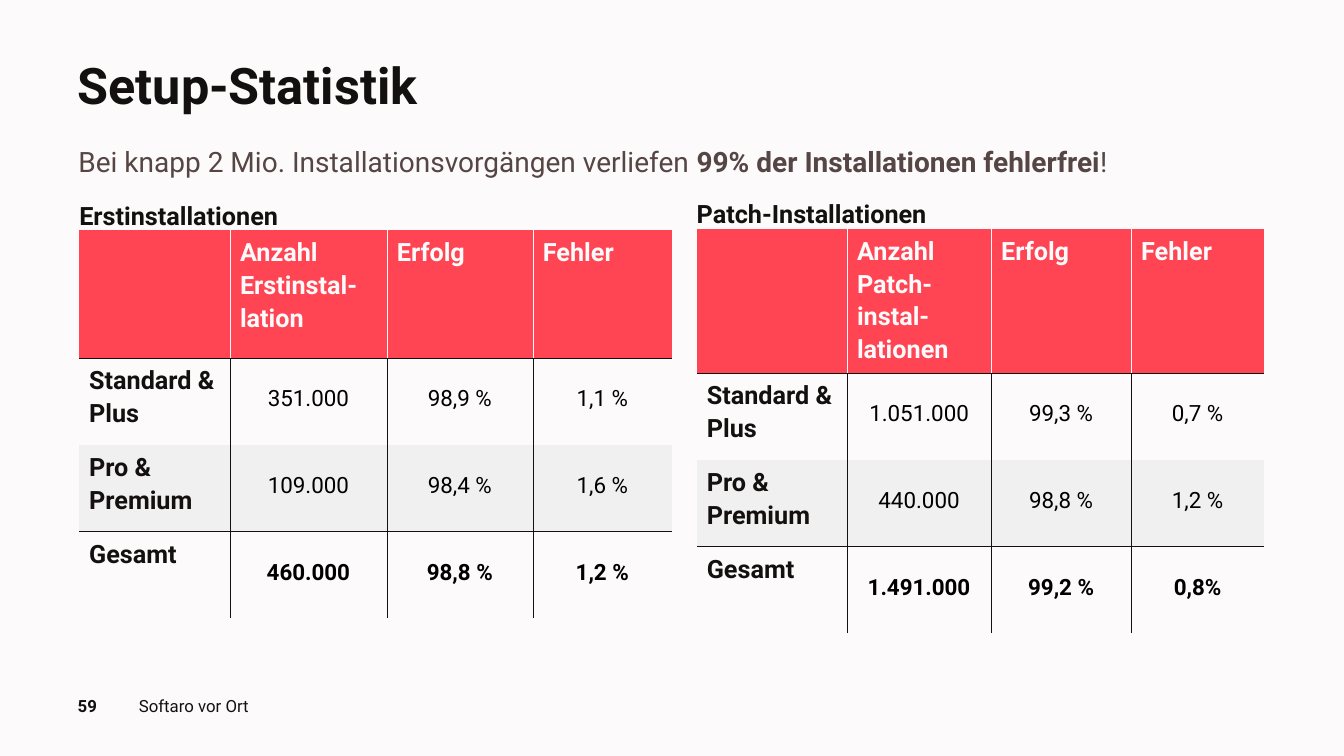
import pptx
import pptx.dml.color
import pptx.enum.text
import pptx.oxml
import pptx.oxml.ns
import pptx.util

Pt = pptx.util.Pt
ALIGN = pptx.enum.text.PP_ALIGN
ANCHOR = pptx.enum.text.MSO_ANCHOR

INK, BLACK, BROWN = "141010", "000000", "564545"
PAPER, RED, GREY = "FCFAFA", "FF4554", "F0F0F0"
HEADER_HEIGHT, BODY_HEIGHT = 91.5, 62
TOTAL_ROW = 3

INITIAL_ROWS = [
    ["", "Anzahl\nErstinstal-lation", "Erfolg", "Fehler"],
    ["Standard & Plus", "351.000", "98,9 %", "1,1 %"],
    ["Pro & Premium", "109.000", "98,4 %", "1,6 %"],
    ["Gesamt", "460.000", "98,8 %", "1,2 %"],
]
PATCH_ROWS = [
    ["", "Anzahl\vPatch-instal-lationen", "Erfolg", "Fehler"],
    ["Standard & Plus", "1.051.000", "99,3 %", "0,7 %"],
    ["Pro & Premium", "440.000", "98,8 %", "1,2 %"],
    ["Gesamt", "1.491.000", "99,2 %", "0,8%"],
]


def color(value):
    return pptx.dml.color.RGBColor.from_string(value)


def set_font(span, size, ink, bold=False):
    for name, value in {"name": "Roboto", "size": Pt(size), "bold": bold}.items():
        setattr(span.font, name, value)
    span.font.color.rgb = color(ink)


def add_text(page, place, spans, size, ink, spacing=1.0, insets=(0, 0, 0, 0)):
    """Add a one-paragraph box; spans are (text, bold) pairs."""
    box = page.shapes.add_textbox(*map(Pt, place))
    frame = box.text_frame
    frame.word_wrap = True
    sides = ("margin_left", "margin_top", "margin_right", "margin_bottom")
    for side, inset in zip(sides, insets):
        setattr(frame, side, Pt(inset))
    para = frame.paragraphs[0]
    para.line_spacing = spacing
    for text, bold in spans:
        span = para.add_run()
        span.text = text
        set_font(span, size, ink, bold)


def set_borders(cell, borders):
    """Draw the named edges in their colours and leave the others empty."""
    properties = cell._tc.get_or_add_tcPr()
    namespace = pptx.oxml.ns.nsdecls("a")
    for position, side in enumerate("LRTB"):
        paint = "<a:noFill/>"
        if side in borders:
            paint = f'<a:solidFill><a:srgbClr val="{borders[side]}"/></a:solidFill>'
        line = pptx.oxml.parse_xml(
            f'<a:ln{side} {namespace} w="{Pt(0.5)}">{paint}</a:ln{side}>')
        properties.insert(position, line)


def cell_borders(row, column, last_row, last_column):
    """White rules in the header, dark rules in the body and above the total."""
    upright = PAPER if row == 0 else INK
    borders = {}
    if column > 0:
        borders["L"] = upright
    if column < last_column:
        borders["R"] = upright
    if row in (1, TOTAL_ROW):
        borders["T"] = INK
    if row + 1 in (1, TOTAL_ROW) and row < last_row:
        borders["B"] = INK
    return borders


def format_cell(cell, row, column):
    fill = {0: RED, 2: GREY}.get(row)
    if fill:
        cell.fill.solid()
        cell.fill.fore_color.rgb = color(fill)
    else:
        cell.fill.background()
    is_number = row > 0 and column > 0
    if is_number:
        cell.vertical_anchor = ANCHOR.MIDDLE
    for para in cell.text_frame.paragraphs:
        para.line_spacing = Pt(15) if is_number else 1.11
        if is_number:
            para.alignment = ALIGN.CENTER
        for span in para.runs:
            if is_number:
                set_font(span, 16, BLACK, row == TOTAL_ROW)
            else:
                set_font(span, 18, PAPER if row == 0 else INK, True)


def add_statistics(page, left, top, widths, rows):
    heights = [HEADER_HEIGHT] + [BODY_HEIGHT] * (len(rows) - 1)
    place = map(Pt, (left, top, sum(widths), sum(heights)))
    table = page.shapes.add_table(len(rows), len(widths), *place).table
    table.horz_banding = False
    for table_column, width in zip(table.columns, widths):
        table_column.width = Pt(width)
    for table_row, height in zip(table.rows, heights):
        table_row.height = Pt(height)
    for row, texts in enumerate(rows):
        for column, text in enumerate(texts):
            cell = table.cell(row, column)
            cell.text_frame.text = text
            format_cell(cell, row, column)
            set_borders(cell, cell_borders(row, column, len(rows) - 1, len(texts) - 1))


def main():
    deck = pptx.Presentation()
    deck.slide_width, deck.slide_height = Pt(960), Pt(540)
    page = deck.slides.add_slide(deck.slide_layouts[6])
    page.background.fill.solid()
    page.background.fill.fore_color.rgb = color(PAPER)

    # Title and key message
    add_text(page, (55.5, 44, 850, 79), [("Setup-Statistik", True)], 36, INK, 0.88)
    message = [
        ("Bei knapp 2 Mio. Installationsvorgängen verliefen ", False),
        ("99% der Installationen fehlerfrei", True),
        ("!", False),
    ]
    add_text(page, (56, 99.5, 847, 84), message, 20, BROWN, insets=(0, 3.6, 7.2, 3.6))

    # Tables
    add_statistics(page, 56.5, 164.3, (107.8, 112.1, 104.3, 99.2), INITIAL_ROWS)
    add_statistics(page, 497.7, 163.4, (107.3, 103, 100, 95), PATCH_ROWS)

    # Table captions
    add_text(page, (56.7, 140.4, 415, 29), [("Erstinstallationen", True)], 18, INK, 1.11)
    add_text(page, (497.7, 139, 405, 30), [("Patch-Installationen", True)], 18, INK, 1.11)

    # Footer
    add_text(page, (99.2, 497, 489, 14.4), [("Softaro vor Ort", False)], 12, INK)
    add_text(page, (55.5, 497, 27.4, 14.4), [("59", True)], 12, INK)

    deck.save("out.pptx")


if __name__ == "__main__":
    main()
